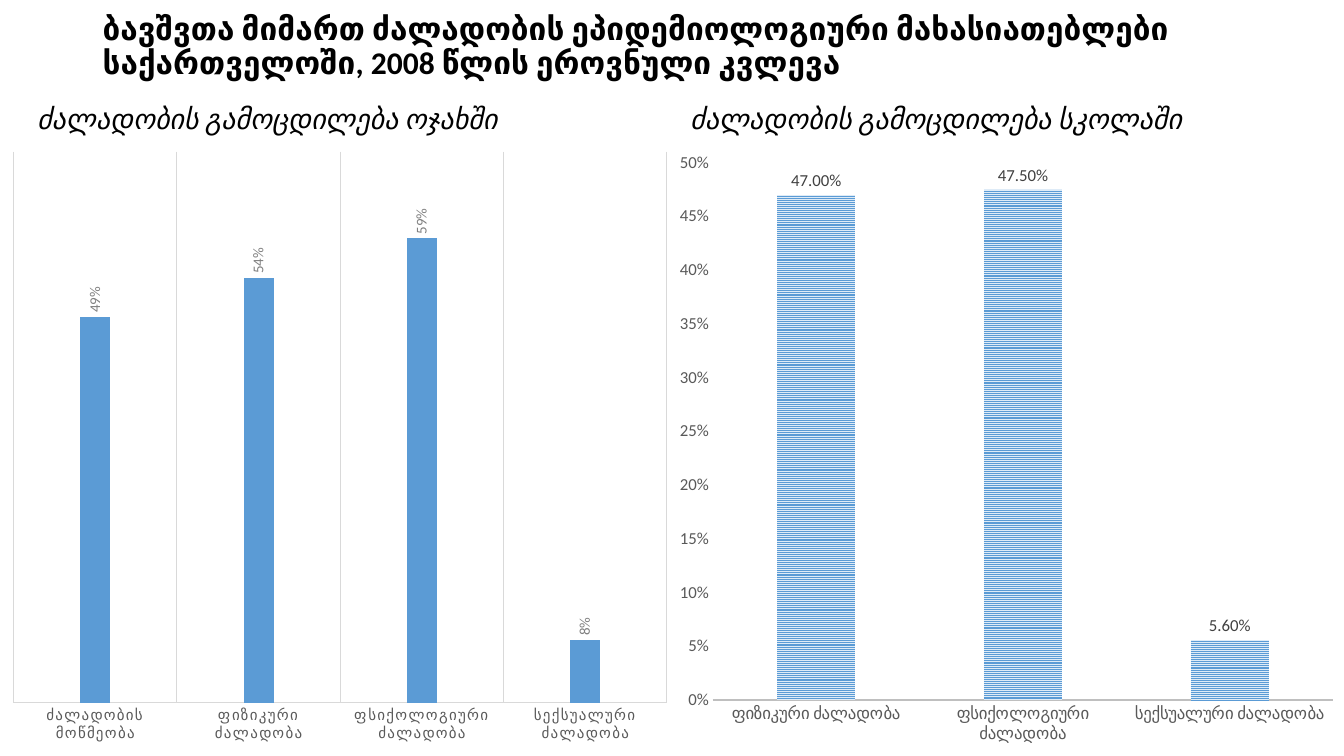
from pptx import Presentation
from pptx import util as u
from pptx.chart.data import CategoryChartData
from pptx.dml.color import RGBColor
from pptx.enum import chart as ch, dml, text

WITNESS = "ძალადობის მოწმეობა"
FORMS = ["ფიზიკური ძალადობა", "ფსიქოლოგიური ძალადობა", "სექსუალური ძალადობა"]


def rgb(value):
    return RGBColor.from_string(value)


def box(left, top, width, height):
    return [u.Cm(v) for v in (left, top, width, height)]


class Deck:
    font = "Calibri"
    black, grey = "000000", "595959"
    blue, pale = "5B9BD5", "DEEBF7"

    def __init__(self):
        self.prs = Presentation()
        self.prs.slide_width, self.prs.slide_height = u.Cm(33.87), u.Cm(19.05)
        self.s = self.prs.slides.add_slide(self.prs.slide_layouts[6])

    def style(self, font, size, color, **extra):
        for name, value in dict(name=self.font, size=u.Pt(size), **extra).items():
            setattr(font, name, value)
        font.color.rgb = rgb(color)

    def line(self, fmt, color, width):
        fmt.line.color.rgb = rgb(color)
        fmt.line.width = u.Pt(width)

    def text(self, words, at, size, before=0, anchor=text.MSO_ANCHOR.TOP, **extra):
        tf = self.s.shapes.add_textbox(*box(*at)).text_frame
        tf.word_wrap = True
        tf.vertical_anchor = anchor
        p = tf.paragraphs[0]
        p.line_spacing, p.space_before = 0.9, u.Pt(before)
        r = p.add_run()
        r.text = words
        self.style(r.font, size, self.black, **extra)

    def columns(self, at, cats, vals, fmt, gap, overlap, size, label_color, axis_line, top):
        """Add a one-series column chart with labels above the columns."""
        data = CategoryChartData(number_format=fmt)
        data.categories = cats
        data.add_series("Series 1", vals)
        kind = ch.XL_CHART_TYPE.COLUMN_CLUSTERED
        chart = self.s.shapes.add_chart(kind, *box(*at), data).chart
        self.style(chart.font, 10, self.black)
        chart.has_legend = chart.has_title = False

        plot = chart.plots[0]
        plot.gap_width, plot.overlap, plot.vary_by_categories = gap, overlap, False
        plot.has_data_labels = True
        labels = plot.data_labels
        formats = dict(show_value=True, number_format=fmt, number_format_is_linked=False,
                       position=ch.XL_LABEL_POSITION.OUTSIDE_END)
        for name, value in formats.items():
            setattr(labels, name, value)
        self.style(labels.font, size, label_color)

        for axis in (chart.category_axis, chart.value_axis):
            axis.major_tick_mark = axis.minor_tick_mark = ch.XL_TICK_MARK.NONE
            axis.has_major_gridlines = False
            self.style(axis.tick_labels.font, size, self.grey)
        self.line(chart.category_axis.format, *axis_line)
        axis = chart.value_axis
        axis.minimum_scale, axis.maximum_scale = 0, top
        axis.format.line.fill.background()
        axis.tick_labels.number_format = "0%"
        axis.tick_labels.number_format_is_linked = False
        return chart

    def family_chart(self, at):
        thin = ("D9D9D9", 0.75)
        chart = self.columns(at, [WITNESS] + FORMS, [0.49, 0.54, 0.59, 0.08], "0%",
                             444, -90, 10.64, "808080", thin, 0.7)
        chart.value_axis.visible = False
        axis = chart.category_axis
        axis.has_major_gridlines = True
        self.line(axis.major_gridlines.format, *thin)
        axis.tick_labels.font._element.set("spc", "120")
        plot = chart.plots[0]
        body = plot.data_labels._element.txPr.bodyPr
        body.set("rot", "-5400000")
        body.set("vert", "horz")
        fill = plot.series[0].format.fill
        fill.solid()
        fill.fore_color.rgb = rgb(self.blue)

    def school_chart(self, at):
        chart = self.columns(at, FORMS, [0.47, 0.475, 0.056], "0.00%",
                             164, -22, 11.97, "404040", ("BFBFBF", 1.5), 0.5)
        chart.value_axis.major_unit = 0.05
        fill = chart.plots[0].series[0].format.fill
        fill.patterned()
        fill.pattern = dml.MSO_PATTERN.NARROW_HORIZONTAL
        fill.fore_color.rgb, fill.back_color.rgb = rgb(self.blue), rgb(self.pale)


def main():
    deck = Deck()
    deck.text("ბავშვთა მიმართ ძალადობის ეპიდემიოლოგიური მახასიათებლები "
              "საქართველოში, 2008 წლის ეროვნული კვლევა",
              (2.34, 0.3, 29.21, 1.8), 22.5, anchor=text.MSO_ANCHOR.MIDDLE, bold=True)
    headings = [("ძალადობის გამოცდილება ოჯახში", 0.69),
                ("ძალადობის გამოცდილება სკოლაში", 17.15)]
    for words, left in headings:
        deck.text(words, (left, 2.54, 16, 15.77), 20, before=10, italic=True)
    deck.family_chart((0, 3.51, 17.15, 15.51))
    deck.school_chart((16.79, 3.53, 17.15, 15.52))
    deck.prs.save("out.pptx")


if __name__ == "__main__":
    main()
